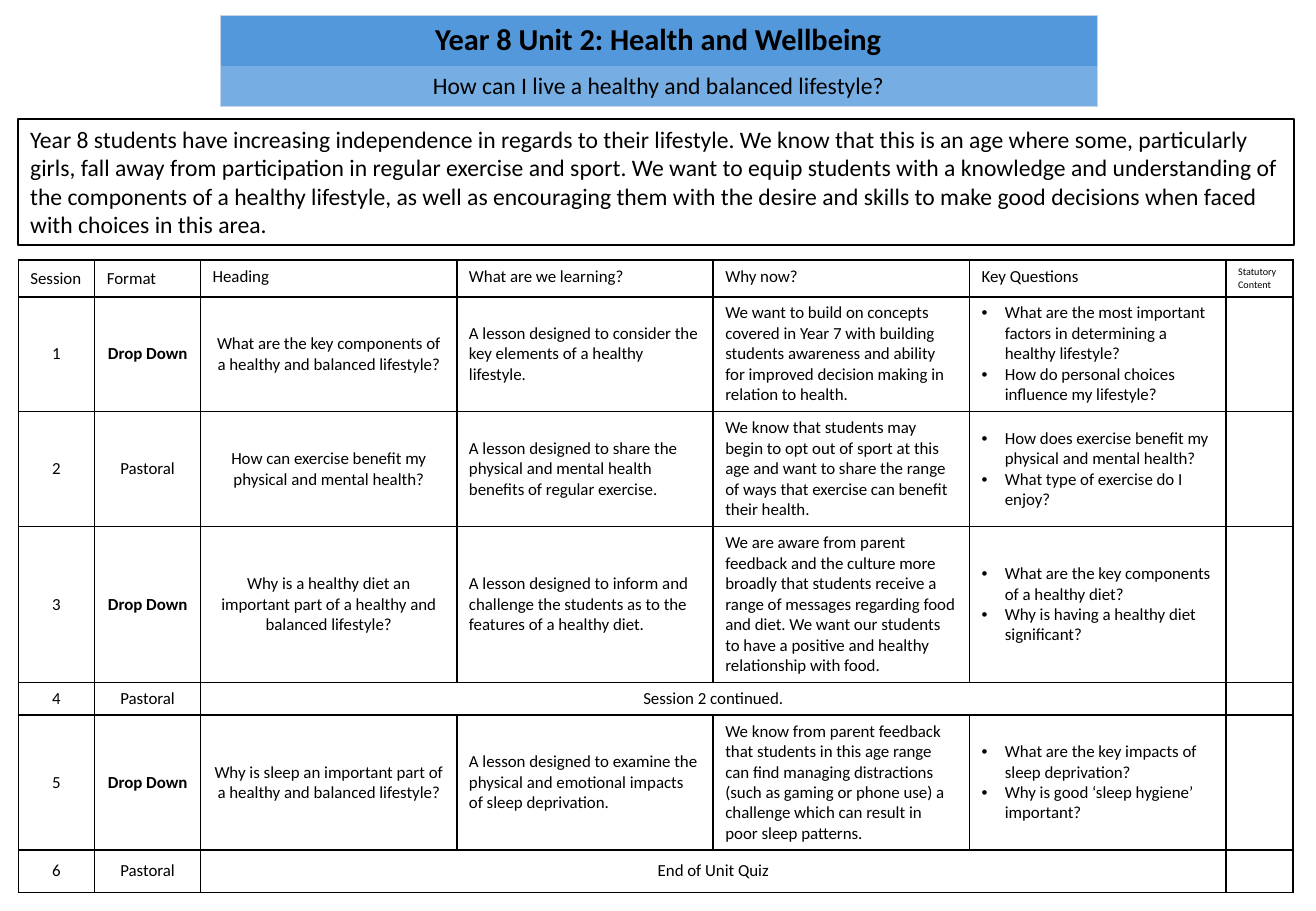
import pptx
import pptx.util
import pptx.dml.color
import pptx.enum.shapes
import pptx.enum.text
from lxml import etree
from pptx.oxml.ns import qn

# Content
BANNER = [
    ("Year 8 Unit 2: Health and Wellbeing", 18, True, "banner"),
    ("How can I live a healthy and balanced lifestyle?", 14, False, "subbanner"),
]
INTRO = (
    "Year 8 students have increasing independence in regards to their lifestyle. "
    "We know that this is an age where some, particularly girls, fall away from "
    "participation in regular exercise and sport. We want to equip students with a "
    "knowledge and understanding of the components of a healthy lifestyle, as well as "
    "encouraging them with the desire and skills to make good decisions when faced "
    "with choices in this area."
)
HEADER = ["Session", "Format", "Heading", "What are we learning?", "Why now?",
          "Key Questions", "Statutory Content"]
# Format, heading, learning, why now, key questions; a short row spans the middle
SESSIONS = [
    ("Drop Down", "What are the key components of a healthy and balanced lifestyle?",
     "A lesson designed to consider the key elements of a healthy lifestyle.",
     "We want to build on concepts covered in Year 7 with building students awareness "
     "and ability for improved decision making in relation to health.",
     ["What are the most important factors in determining a healthy lifestyle?",
      "How do personal choices influence my lifestyle?"]),
    ("Pastoral", "How can exercise benefit my physical and mental health?",
     "A lesson designed to share the physical and mental health benefits of regular exercise.",
     "We know that students may begin to opt out of sport at this age and want to share "
     "the range of ways that exercise can benefit their health.",
     ["How does exercise benefit my physical and mental health?",
      "What type of exercise do I enjoy?"]),
    ("Drop Down", "Why is a healthy diet an important part of a healthy and balanced lifestyle?",
     "A lesson designed to inform and challenge the students as to the features of a healthy diet.",
     "We are aware from parent feedback and the culture more broadly that students receive "
     "a range of messages regarding food and diet. We want our students to have a positive "
     "and healthy relationship with food.",
     ["What are the key components of a healthy diet?",
      "Why is having a healthy diet significant?"]),
    ("Pastoral", "Session 2 continued."),
    ("Drop Down", "Why is sleep an important part of a healthy and balanced lifestyle?",
     "A lesson designed to examine the physical and emotional impacts of sleep deprivation.",
     "We know from parent feedback that students in this age range can find managing "
     "distractions (such as gaming or phone use) a challenge which can result in poor "
     "sleep patterns.",
     ["What are the key impacts of sleep deprivation?",
      "Why is good ‘sleep hygiene’ important?"]),
    ("Pastoral", "End of Unit Quiz"),
]

# Layout, in inches
SLIDE_W, SLIDE_H = 10.83, 7.5
MARGIN, CONTENT_W = 0.15, 10.5
BANNER_ROWS = [0.41, 0.33]
PLAN_COLS = [0.63, 0.87] + [2.11] * 4 + [0.55]
PLAN_ROWS = [0.3, 0.94, 0.95, 1.28, 0.27, 1.11, 0.35]
COLORS = {"banner": "5398DB", "subbanner": "76ADE2", "edge": "C4D5EB",
          "text": "000000", "white": "FFFFFF"}
FONT = "Calibri"
LEFT, CENTER = pptx.enum.text.PP_ALIGN.LEFT, pptx.enum.text.PP_ALIGN.CENTER
TOP, MIDDLE = pptx.enum.text.MSO_ANCHOR.TOP, pptx.enum.text.MSO_ANCHOR.MIDDLE
Inches, Pt = pptx.util.Inches, pptx.util.Pt


def rgb(name):
    return pptx.dml.color.RGBColor.from_string(COLORS[name])


def write(tf, text, size=10, bold=False, align=LEFT):
    """Write one paragraph, or a bulleted list when text is a list."""
    bulleted = isinstance(text, list)
    for i, line in enumerate(text if bulleted else [text]):
        p = tf.paragraphs[0] if i == 0 else tf.add_paragraph()
        p.alignment = align
        if bulleted:
            pPr = p._p.get_or_add_pPr()
            pPr.set("marL", str(Inches(0.19)))
            pPr.set("indent", str(-Inches(0.19)))
            etree.SubElement(pPr, qn("a:buFont")).set("typeface", "Arial")
            etree.SubElement(pPr, qn("a:buChar")).set("char", "•")
        if not line:
            etree.SubElement(p._p, qn("a:endParaRPr")).set("sz", str(size * 100))
            continue
        r = p.add_run()
        r.text = line
        r.font.name, r.font.size, r.font.bold = FONT, Pt(size), bold
        r.font.color.rgb = rgb("text")


def set_borders(cell, color, width, sides="LRTB"):
    """Draw the given sides and clear the others."""
    tcPr = cell._tc.get_or_add_tcPr()
    for i, side in enumerate("LRTB"):
        ln = etree.Element(qn(f"a:ln{side}"), w=str(Pt(width)))
        if side in sides:
            fill = etree.SubElement(ln, qn("a:solidFill"))
            etree.SubElement(fill, qn("a:srgbClr")).set("val", COLORS[color])
        else:
            etree.SubElement(ln, qn("a:noFill"))
        tcPr.insert(i, ln)


def add_grid(s, left, top, cols, rows):
    table = s.shapes.add_table(len(rows), len(cols), Inches(left), Inches(top),
                               Inches(sum(cols)), Inches(sum(rows))).table
    table.first_row = table.horz_banding = False
    for col, width in zip(table.columns, cols):
        col.width = Inches(width)
    for row, height in zip(table.rows, rows):
        row.height = Inches(height)
    return table


def add_banner(s):
    table = add_grid(s, 1.81, 0.13, [7.22], BANNER_ROWS)
    for i, (text, size, bold, fill) in enumerate(BANNER):
        cell = table.cell(i, 0)
        cell.fill.solid()
        cell.fill.fore_color.rgb = rgb(fill)
        set_borders(cell, "edge", 0.5, "LRT" if i == 0 else "LRB")
        write(cell.text_frame, text, size=size, bold=bold, align=CENTER)


def add_intro(s):
    sp = s.shapes.add_shape(pptx.enum.shapes.MSO_SHAPE.RECTANGLE, Inches(MARGIN),
                            Inches(0.98), Inches(CONTENT_W), Inches(1.04))
    sp.shadow.inherit = False
    sp.fill.solid()
    sp.fill.fore_color.rgb = rgb("white")
    sp.line.color.rgb, sp.line.width = rgb("text"), Pt(1)
    tf = sp.text_frame
    tf.word_wrap, tf.vertical_anchor = True, TOP
    write(tf, INTRO, size=14)


def add_plan(s):
    table = add_grid(s, MARGIN, 2.14, PLAN_COLS, PLAN_ROWS)
    last = len(PLAN_COLS) - 1
    rows = [HEADER]
    for number, session in enumerate(SESSIONS, 1):
        row = [str(number), *session]
        rows.append(row + [""] * (last + 1 - len(row)))
    for i, row in enumerate(rows):
        for j, text in enumerate(row):
            cell = table.cell(i, j)
            cell.fill.background()
            set_borders(cell, "text", 1)
            cell.vertical_anchor = MIDDLE if i or j < 2 else TOP
            centered = i and (j < 3)
            write(cell.text_frame, text, size=6 if i == 0 and j == last else 10,
                  bold=text == "Drop Down", align=CENTER if centered else LEFT)
        if i and len(SESSIONS[i - 1]) == 2:
            table.cell(i, 2).merge(table.cell(i, last - 1))


def main():
    prs = pptx.Presentation()
    prs.slide_width, prs.slide_height = Inches(SLIDE_W), Inches(SLIDE_H)
    s = prs.slides.add_slide(prs.slide_layouts[6])
    add_banner(s)
    add_plan(s)
    add_intro(s)
    prs.save("out.pptx")


if __name__ == "__main__":
    main()
